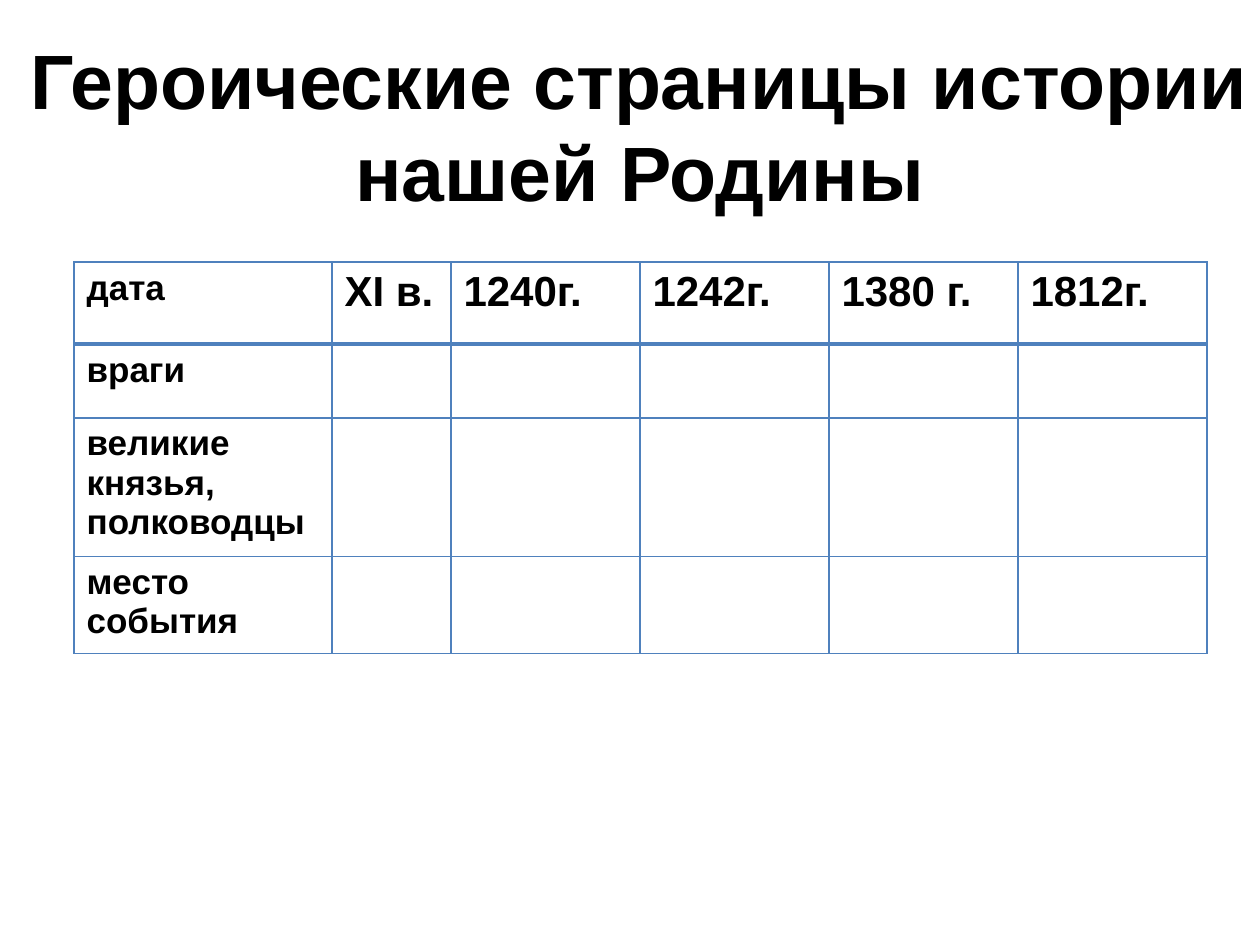
from dataclasses import dataclass

from lxml import etree
from pptx import Presentation
from pptx.dml.color import RGBColor
from pptx.enum.text import MSO_ANCHOR, MSO_AUTO_SIZE, PP_ALIGN
from pptx.oxml.ns import qn
from pptx.util import Emu, Pt

CENTER = PP_ALIGN.CENTER
LEFT = PP_ALIGN.LEFT
TOP = MSO_ANCHOR.TOP
GROW = MSO_AUTO_SIZE.SHAPE_TO_FIT_TEXT
EMU_PER_PX = 914400 / 126
TITLE_ONLY = 5


@dataclass(frozen=True)
class Theme:
    font: str = "Arial"
    ink: str = "000000"
    rule: str = "4F81BD"
    band: str = "FFFFFF"
    band_opacity: int = 20
    title_size: int = 44
    date_size: int = 24
    label_size: int = 20
    thin: int = 1
    thick: int = 2


THEME = Theme()
TITLE = "Героические страницы истории нашей Родины"
DATES = ["XI в.", "1240г.", "1242г.", "1380 г.", "1812г."]
LABELS = ["дата", "враги", "великие князья, полководцы", "место события"]
COLUMN_WIDTHS = [258, 119] + [189] * 4
ROW_HEIGHTS = [82, 74, 138, 97]


def px(length):
    return Emu(round(length * EMU_PER_PX))


def style_paragraph(paragraph, size, alignment):
    paragraph.alignment = alignment
    font = paragraph.font
    font.name = THEME.font
    font.size = Pt(size)
    font.bold = True
    font.color.rgb = RGBColor.from_string(THEME.ink)


def place_title(slide, left, top, width, height):
    title = slide.shapes.title
    title.left, title.top, title.width, title.height = map(px, (left, top, width, height))
    frame = title.text_frame
    frame.text = TITLE
    frame.word_wrap = True
    frame.auto_size = GROW
    frame.vertical_anchor = TOP
    style_paragraph(frame.paragraphs[0], THEME.title_size, CENTER)


def draw_borders(cell, row):
    properties = cell._tc.get_or_add_tcPr()
    widths = {
        "L": THEME.thin,
        "R": THEME.thin,
        "T": THEME.thick if row == 1 else THEME.thin,
        "B": THEME.thick if row == 0 else THEME.thin,
    }
    for side, width in widths.items():
        line = etree.SubElement(properties, qn(f"a:ln{side}"), w=str(Pt(width)))
        fill = etree.SubElement(line, qn("a:solidFill"))
        etree.SubElement(fill, qn("a:srgbClr"), val=THEME.rule)


def fill_cell(cell, banded):
    if not banded:
        cell.fill.background()
        return
    cell.fill.solid()
    cell.fill.fore_color.rgb = RGBColor.from_string(THEME.band)
    color = cell._tc.tcPr.find(qn("a:solidFill")).find(qn("a:srgbClr"))
    etree.SubElement(color, qn("a:alpha"), val=str(THEME.band_opacity * 1000))


def place_history_table(slide, left, top, width, height):
    history = slide.shapes.add_table(
        len(ROW_HEIGHTS), len(COLUMN_WIDTHS), *map(px, (left, top, width, height))
    ).table
    history.horz_banding = False
    for column, column_width in zip(history.columns, COLUMN_WIDTHS):
        column.width = px(column_width)
    for row, row_height in zip(history.rows, ROW_HEIGHTS):
        row.height = px(row_height)
    blanks = [""] * len(DATES)
    for row, label in enumerate(LABELS):
        entries = [label] + (DATES if row == 0 else blanks)
        for column, entry in enumerate(entries):
            cell = history.cell(row, column)
            draw_borders(cell, row)
            fill_cell(cell, row % 2 == 1)
            if entry:
                cell.text = entry
                size = THEME.date_size if column else THEME.label_size
                style_paragraph(cell.text_frame.paragraphs[0], size, LEFT)


def main():
    presentation = Presentation()
    presentation.slide_width = px(1260)
    presentation.slide_height = px(945)
    slide = presentation.slides.add_slide(presentation.slide_layouts[TITLE_ONLY])
    place_title(slide, 0, 26, 1280, 199)
    place_history_table(slide, 74, 262, sum(COLUMN_WIDTHS), sum(ROW_HEIGHTS))
    presentation.save("out.pptx")


if __name__ == "__main__":
    main()
